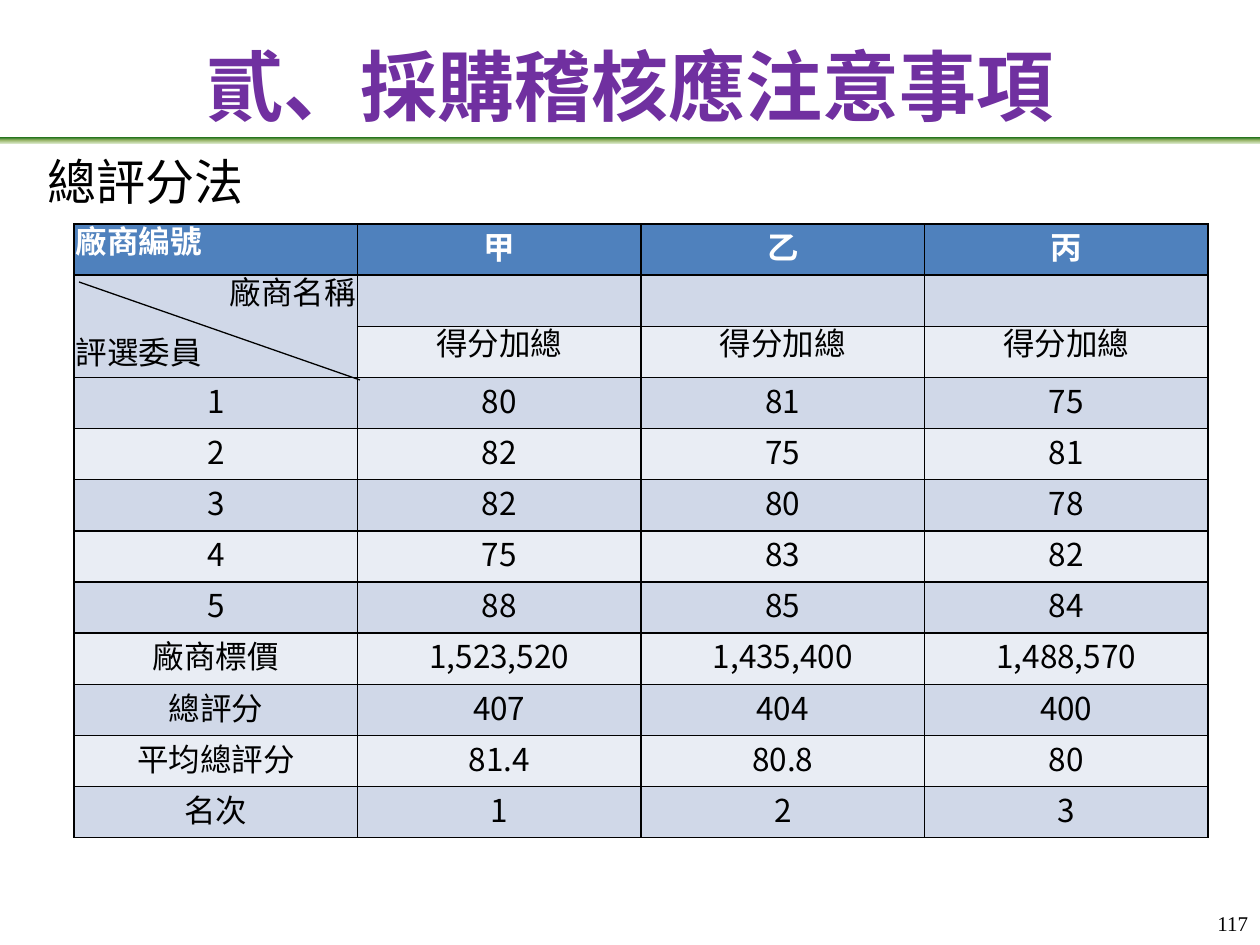
from copy import deepcopy
from pptx import Presentation
from pptx import util as u
from pptx.dml.color import RGBColor
from pptx.enum import shapes, text
from pptx.oxml import parse_xml
from pptx.oxml.ns import qn
from lxml import etree

SANS = "Noto Sans CJK SC"
NS = "http://schemas.openxmlformats.org/drawingml/2006/main"
LEFT, MID, RIGHT = text.PP_ALIGN.LEFT, text.PP_ALIGN.CENTER, text.PP_ALIGN.RIGHT
TOP, CENTER = text.MSO_ANCHOR.TOP, text.MSO_ANCHOR.MIDDLE


def px(*vals):
    """Turn pixels (126 to the inch) into EMU."""
    return [u.Emu(round(v * 914400 / 126)) for v in vals]


def add_run(para, words, size, color="000000", bold=False, face=SANS, align=LEFT):
    para.alignment = align
    run = para.add_run()
    run.text = words
    font = run.font
    font.size, font.bold, font.name = u.Pt(size), bold, face
    font.color.rgb = RGBColor.from_string(color)
    etree.SubElement(run._r.get_or_add_rPr(), qn("a:ea"), typeface=face)


deck = Presentation()
deck.slide_width, deck.slide_height = px(1260, 945)
slide = deck.slides.add_slide(deck.slide_layouts[5])
parts = slide.shapes

# Rule under the title
rule = parts.add_shape(shapes.MSO_SHAPE.RECTANGLE, *px(0, 137, 1260, 7))
rule.shadow.inherit = False
rule.line.fill.background()
rule.fill.gradient()
rule.fill.gradient_angle = 270
first = rule.fill._xPr.find(".//" + qn("a:gs"))
first.addnext(deepcopy(first))
shades = [(0, "156B13"), (0.5, "9CB86E"), (1, "DDEBCF")]
for stop, (pos, color) in zip(rule.fill.gradient_stops, shades):
    stop.position = pos
    stop.color.rgb = RGBColor.from_string(color)

# Score table
rows = [
    ["廠商編號", "甲", "乙", "丙"],
    ["", "", "", ""],
    ["", "得分加總", "得分加總", "得分加總"],
    ["1", "80", "81", "75"],
    ["2", "82", "75", "81"],
    ["3", "82", "80", "78"],
    ["4", "75", "83", "82"],
    ["5", "88", "85", "84"],
    ["廠商標價", "1,523,520", "1,435,400", "1,488,570"],
    ["總評分", "407", "404", "400"],
    ["平均總評分", "81.4", "80.8", "80"],
    ["名次", "1", "2", "3"],
]
table = parts.add_table(len(rows), 4, *px(74, 224, 1134, 614)).table
for row in table.rows:
    row.height = px(614 / len(rows))[0]
for r, row in enumerate(rows):
    for c, words in enumerate(row):
        cell = table.cell(r, c)
        head = r == 0
        cell.margin_left, cell.margin_right = px(2, 2)
        cell.margin_top = cell.margin_bottom = 0
        cell.vertical_anchor = TOP if r in (1, 2) or (r, c) == (0, 0) else CENTER
        para = cell.text_frame.paragraphs[0]
        para.line_spacing = u.Pt(22)
        if words:
            add_run(para, words, 18, "FFFFFF" if head else "000000", head,
                    align=LEFT if (r, c) == (0, 0) else MID)
        props = cell._tc.get_or_add_tcPr()
        for side in ("lnL", "lnR", "lnT", "lnB"):
            props.append(parse_xml(
                f'<a:{side} xmlns:a="{NS}" w="12700"><a:solidFill>'
                f'<a:srgbClr val="000000"/></a:solidFill></a:{side}>'))
        cell.fill.solid()
        cell.fill.fore_color.rgb = RGBColor.from_string(
            "4F81BD" if head else "D0D8E8" if r % 2 else "E9EDF4")

corner = table.cell(1, 0)
corner.merge(table.cell(2, 0))
para = corner.text_frame.paragraphs[0]
para.space_after = u.Pt(12)
add_run(para, "廠商名稱", 18, align=RIGHT)
para = corner.text_frame.add_paragraph()
para.line_spacing = u.Pt(22)
add_run(para, "評選委員", 18)

# Page number
page = parts.add_textbox(*px(1181, 887, 69, 49)).text_frame
page.word_wrap = True
page.vertical_anchor = text.MSO_ANCHOR.BOTTOM
page.margin_left, page.margin_right = px(2, 2)
page.margin_top = page.margin_bottom = 0
add_run(page.paragraphs[0], "117", 12, face="Times New Roman", align=RIGHT)

# Title
title = parts.title
title.left, title.top, title.width, title.height = px(63, 32, 1134, 106)
title.text_frame.vertical_anchor = CENTER
add_run(title.text_frame.paragraphs[0], "貳、採購稽核應注意事項", 44, "7030A0", True, align=MID)

# Diagonal of the corner cell
slash = parts.add_connector(shapes.MSO_CONNECTOR.STRAIGHT, *px(79, 282, 360, 380))
slash.line.width = u.Pt(0.75)
slash.line.color.rgb = RGBColor.from_string("000000")
etree.SubElement(slash._element.spPr, qn("a:effectLst"))

# Subtitle
method = parts.add_textbox(*px(35, 145, 828, 72)).text_frame
method.word_wrap = True
method.auto_size = text.MSO_AUTO_SIZE.SHAPE_TO_FIT_TEXT
add_run(method.paragraphs[0], "總評分法", 28)

deck.save("out.pptx")
